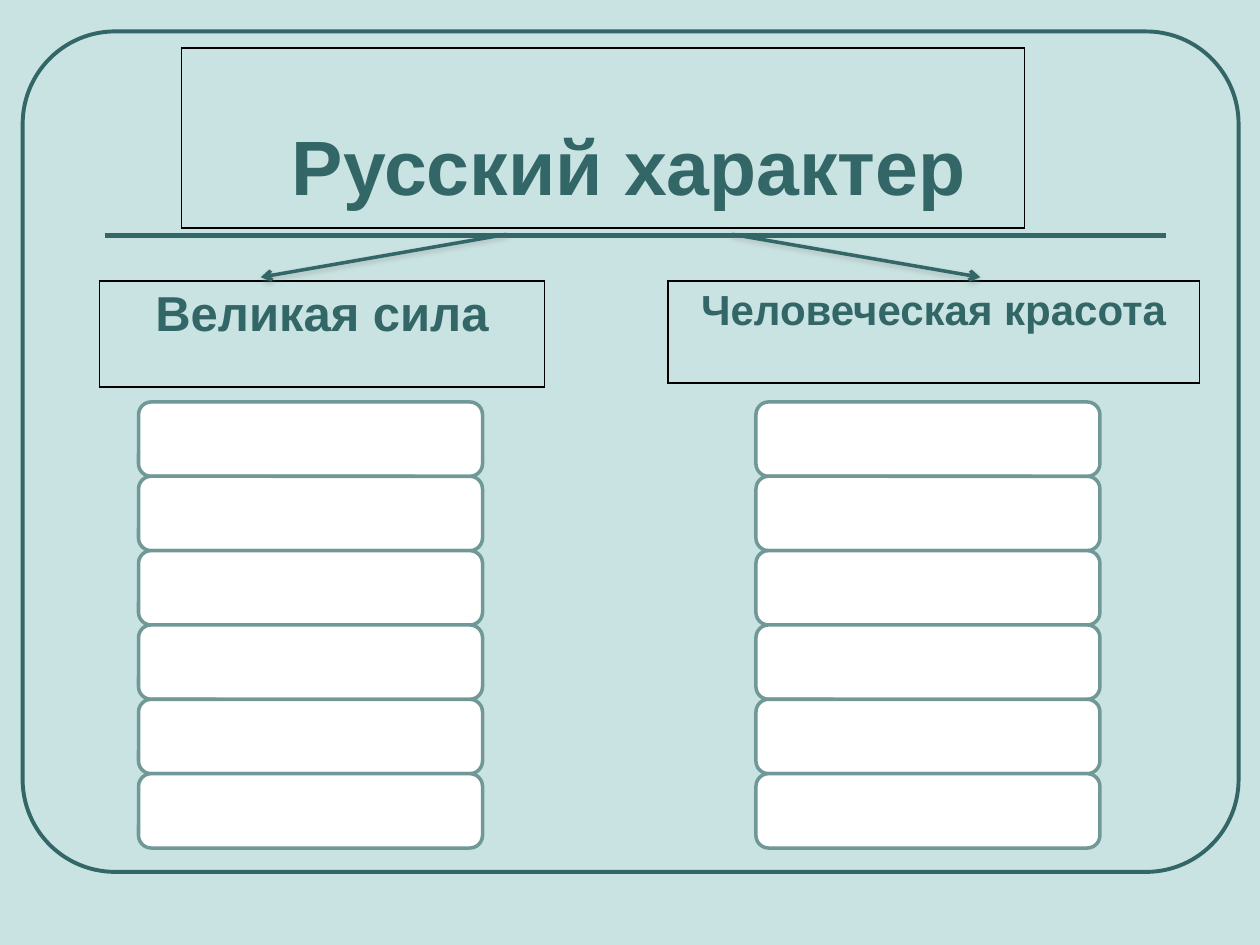
import pptx
import pptx.dml.color
import pptx.enum.shapes
import pptx.enum.text
import pptx.oxml
import pptx.oxml.ns
import pptx.util
from pptx.util import Inches

DARK = "336666"
SHADOW = (
    '<a:outerShdw blurRad="39370" dist="20320" dir="5400000" rotWithShape="0">'
    '<a:srgbClr val="808080"><a:alpha val="38000"/></a:srgbClr></a:outerShdw>'
)


def color(value):
    """Turn a hex string into a colour."""
    return pptx.dml.color.RGBColor.from_string(value)


def element(tag, attributes="", content=""):
    """Make a drawing element."""
    namespace = pptx.oxml.ns.nsdecls("a")
    return pptx.oxml.parse_xml(f"<a:{tag} {namespace} {attributes}>{content}</a:{tag}>")


def style_line(line, value, width):
    """Set the colour and width of a line."""
    line.color.rgb = color(value)
    line.width = pptx.util.Pt(width)


def add_rounded(page, box, line_color, width, fill=None, corner=0.17):
    """Add a rounded rectangle, hollow unless a fill is given."""
    kind = pptx.enum.shapes.MSO_SHAPE.ROUNDED_RECTANGLE
    shape = page.shapes.add_shape(kind, *map(Inches, box))
    shape.adjustments[0] = corner
    shape.shadow.inherit = False
    if fill:
        shape.fill.solid()
        shape.fill.fore_color.rgb = color(fill)
    else:
        shape.fill.background()
    style_line(shape.line, line_color, width)


def add_line(page, start, end, width, arrow=False):
    """Add a straight line, or a shadowed arrow."""
    kind = pptx.enum.shapes.MSO_CONNECTOR.STRAIGHT
    line = page.shapes.add_connector(kind, *map(Inches, start + end))
    style_line(line.line, DARK, width)
    properties = line._element.spPr
    if arrow:
        properties.find(pptx.oxml.ns.qn("a:ln")).append(element("tailEnd", 'type="arrow"'))
    properties.append(element("effectLst", content=SHADOW if arrow else ""))


def add_heading(page, box, text, size, left_margin=0.1, top_margin=0.05):
    """Add a bordered one-cell table with centred bold text."""
    table = page.shapes.add_table(1, 1, *map(Inches, box)).table
    table.first_row = False
    table.horz_banding = False
    cell = table.cell(0, 0)
    cell.margin_left = Inches(left_margin)
    cell.margin_top = Inches(top_margin)
    cell.vertical_anchor = pptx.enum.text.MSO_ANCHOR.TOP
    cell.fill.background()
    fill = '<a:solidFill><a:srgbClr val="000000"/></a:solidFill>'
    for position, side in enumerate("LRTB"):
        border = element(f"ln{side}", 'w="12700"', fill)
        cell._tc.get_or_add_tcPr().insert(position, border)
    para = cell.text_frame.paragraphs[0]
    para.text = text
    para.alignment = pptx.enum.text.PP_ALIGN.CENTER
    para.font.name = "Arial"
    para.font.size = pptx.util.Pt(size)
    para.font.bold = True
    para.font.color.rgb = color(DARK)


def add_stack(page, left, top, width, height, count):
    """Stack empty answer boxes without gaps."""
    for row in range(count):
        box = (left, top + row * height, width, height)
        add_rounded(page, box, "709897", 2, "FFFFFF")


def add_frame(page):
    """Set the background, the outer frame and the rule."""
    page.background.fill.solid()
    page.background.fill.fore_color.rgb = color("C9E3E2")
    add_rounded(page, (0.18, 0.25, 9.65, 6.67), DARK, 2.25, corner=0.11)
    add_line(page, (0.83, 1.87), (9.25, 1.87), 3)


def main():
    """Build and save the slide."""
    deck = pptx.Presentation()
    deck.slide_width = Inches(10)
    deck.slide_height = Inches(7.5)
    page = deck.slides.add_slide(deck.slide_layouts.get_by_name("Blank"))
    add_frame(page)
    add_heading(page, (1.44, 0.38, 6.69, 1.43), "Русский характер", 44, 0.52, 0.62)
    branches = [
        ("Великая сила", 28, (0.79, 2.23, 3.53, 0.84), 4.02, 2.07, 1.1),
        ("Человеческая красота", 24, (5.3, 2.23, 4.22, 0.81), 5.81, 7.78, 6),
    ]
    for text, size, box, arrow_start, arrow_end, stack_left in branches:
        add_heading(page, box, text, size)
        add_line(page, (arrow_start, 1.86), (arrow_end, 2.2), 2, arrow=True)
        add_stack(page, stack_left, 3.19, 2.73, 0.59, 6)
    deck.save("out.pptx")


if __name__ == "__main__":
    main()
